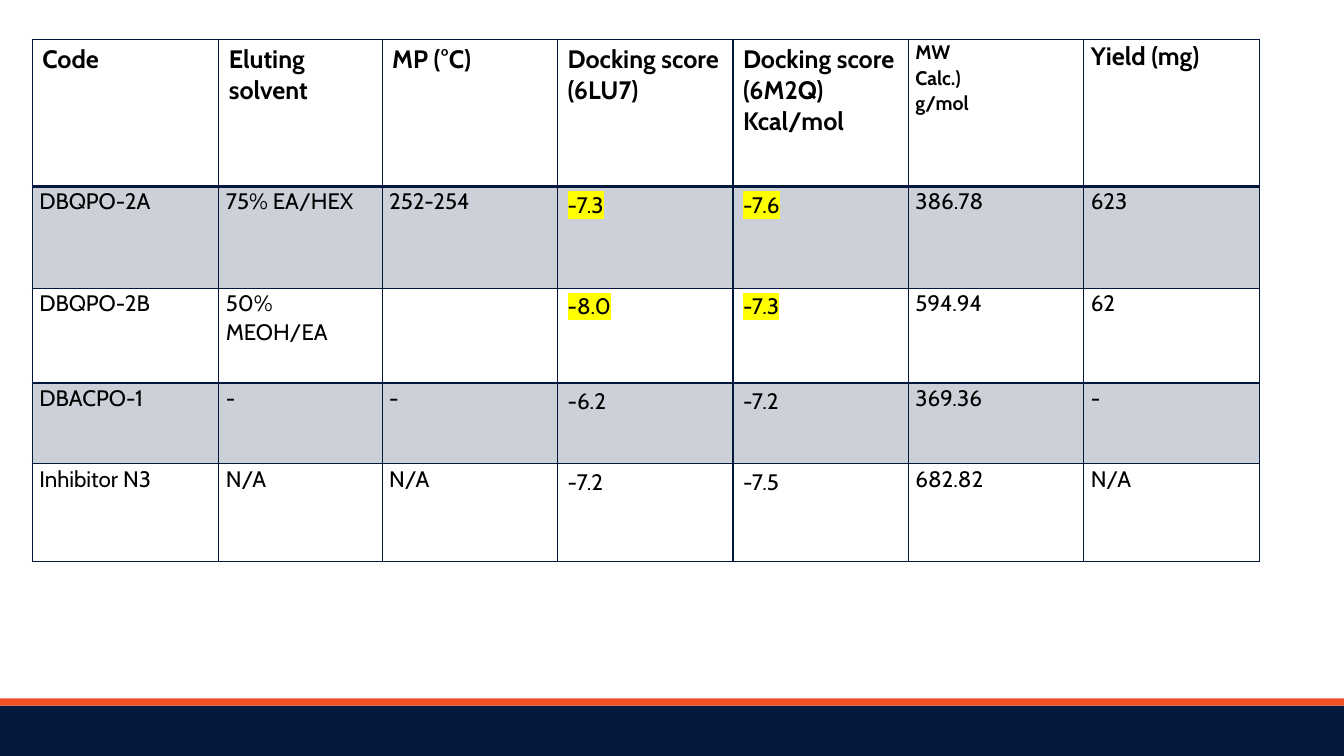
from lxml.etree import SubElement
from pptx import Presentation
from pptx.dml.color import RGBColor
from pptx.enum.shapes import MSO_SHAPE as Shape
from pptx.enum.text import PP_ALIGN as Align
from pptx.oxml import parse_xml
from pptx.oxml.ns import nsdecls, qn
from pptx.util import Inches, Pt

NAVY = RGBColor(0x04, 0x17, 0x3C)
ORANGE = RGBColor(0xF0, 0x50, 0x23)
BLACK = RGBColor(0, 0, 0)
YELLOW = RGBColor(0xFF, 0xFF, 0)
FONT = "Cabin"

ROWS = [
    ["Code", "Eluting solvent", "MP (°C)", "Docking score (6LU7)",
     "Docking score (6M2Q) Kcal/mol", "MW\nCalc.)\ng/mol", "Yield (mg)"],
    ["DBQPO-2A", "75% EA/HEX", "252-254", "-7.3", "-7.6", "386.78", "623"],
    ["DBQPO-2B", "50% MEOH/EA", "", "-8.0", "-7.3", "594.94", "62"],
    ["DBACPO-1", "-", "-", "-6.2", "-7.2", "369.36", "-"],
    ["Inhibitor N3", "N/A", "N/A", "-7.2", "-7.5", "682.82", "N/A"],
]
COLUMN_WIDTHS = [1.85, 1.62] + [1.74] * 5
ROW_HEIGHTS = [1.46, 1.01, 0.94, 0.8, 0.97]
TABLE_LEFT, TABLE_TOP = 0.32, 0.39
SLIDE_WIDTH, SLIDE_HEIGHT = 13.33, 7.5
FOOTER_BANDS = [(7, 0.5, NAVY), (6.93, 0.07, ORANGE)]

SCORE_COLUMNS = (3, 4)
BEST_SCORE_ROWS = (1, 2)
MW_COLUMN = 5
TIGHT_MARGINS = {"margin_left": Inches(0.07), "margin_right": Inches(0.07),
                 "margin_top": 0, "margin_bottom": 0}


def add_band(slide, top, height, colour):
    band = slide.shapes.add_shape(Shape.RECTANGLE, 0, Inches(top),
                                  Inches(SLIDE_WIDTH), Inches(height))
    band.shadow.inherit = False
    band.fill.solid()
    band.fill.fore_color.rgb = colour
    band.line.fill.background()


def is_tight(row, column):
    """Tell whether a cell has small margins and justified text."""
    return column >= MW_COLUMN if row == 0 else column not in SCORE_COLUMNS


def fill_cell(cell, shaded):
    if not shaded:
        cell.fill.background()
        return
    cell.fill.solid()
    cell.fill.fore_color.rgb = NAVY
    colour = cell.fill._xPr.find(f".//{qn('a:srgbClr')}")
    SubElement(colour, qn("a:alpha"), val="20000")


def add_borders(cell, row):
    """Draw 1 pt cell borders, with a 2 pt rule below the header."""
    widths = {"lnL": 1, "lnR": 1, "lnT": 2 if row == 1 else 1,
              "lnB": 2 if row == 0 else 1}
    properties = cell._tc.get_or_add_tcPr()
    for index, (side, width) in enumerate(widths.items()):
        properties.insert(index, parse_xml(
            f'<a:{side} {nsdecls("a")} w="{Pt(width)}"><a:solidFill>'
            f'<a:srgbClr val="{NAVY}"/></a:solidFill></a:{side}>'))


def highlight(span):
    mark = SubElement(span._r.get_or_add_rPr(), qn("a:highlight"))
    SubElement(mark, qn("a:srgbClr"), val=str(YELLOW))


def write_cell(cell, text, row, column):
    tight = is_tight(row, column)
    if tight:
        for name, value in TIGHT_MARGINS.items():
            setattr(cell, name, value)
    if row == 0:
        size = 14 if column == MW_COLUMN else 18
    else:
        size = 16
    cell.text = text
    for para in cell.text_frame.paragraphs:
        if tight:
            para.alignment = Align.JUSTIFY
            para.line_spacing = 1.07
        for span in para.runs:
            span.font.color.rgb = BLACK
            if row in BEST_SCORE_ROWS and column in SCORE_COLUMNS:
                highlight(span)
            style = {"name": FONT, "size": Pt(size), "bold": row == 0}
            for name, value in style.items():
                setattr(span.font, name, value)


def add_results_table(slide):
    table = slide.shapes.add_table(
        len(ROWS), len(COLUMN_WIDTHS), Inches(TABLE_LEFT), Inches(TABLE_TOP),
        Inches(sum(COLUMN_WIDTHS)), Inches(sum(ROW_HEIGHTS))).table
    table.first_row = table.horz_banding = False
    for column, width in zip(table.columns, COLUMN_WIDTHS):
        column.width = Inches(width)
    for row, height in zip(table.rows, ROW_HEIGHTS):
        row.height = Inches(height)
    for row, texts in enumerate(ROWS):
        for column, text in enumerate(texts):
            cell = table.cell(row, column)
            write_cell(cell, text, row, column)
            fill_cell(cell, shaded=row % 2 == 1)
            add_borders(cell, row)


def main():
    deck = Presentation()
    deck.slide_width = Inches(SLIDE_WIDTH)
    deck.slide_height = Inches(SLIDE_HEIGHT)
    page = deck.slides.add_slide(deck.slide_layouts[6])
    for top, height, colour in FOOTER_BANDS:
        add_band(page, top, height, colour)
    add_results_table(page)
    deck.save("out.pptx")


if __name__ == "__main__":
    main()
